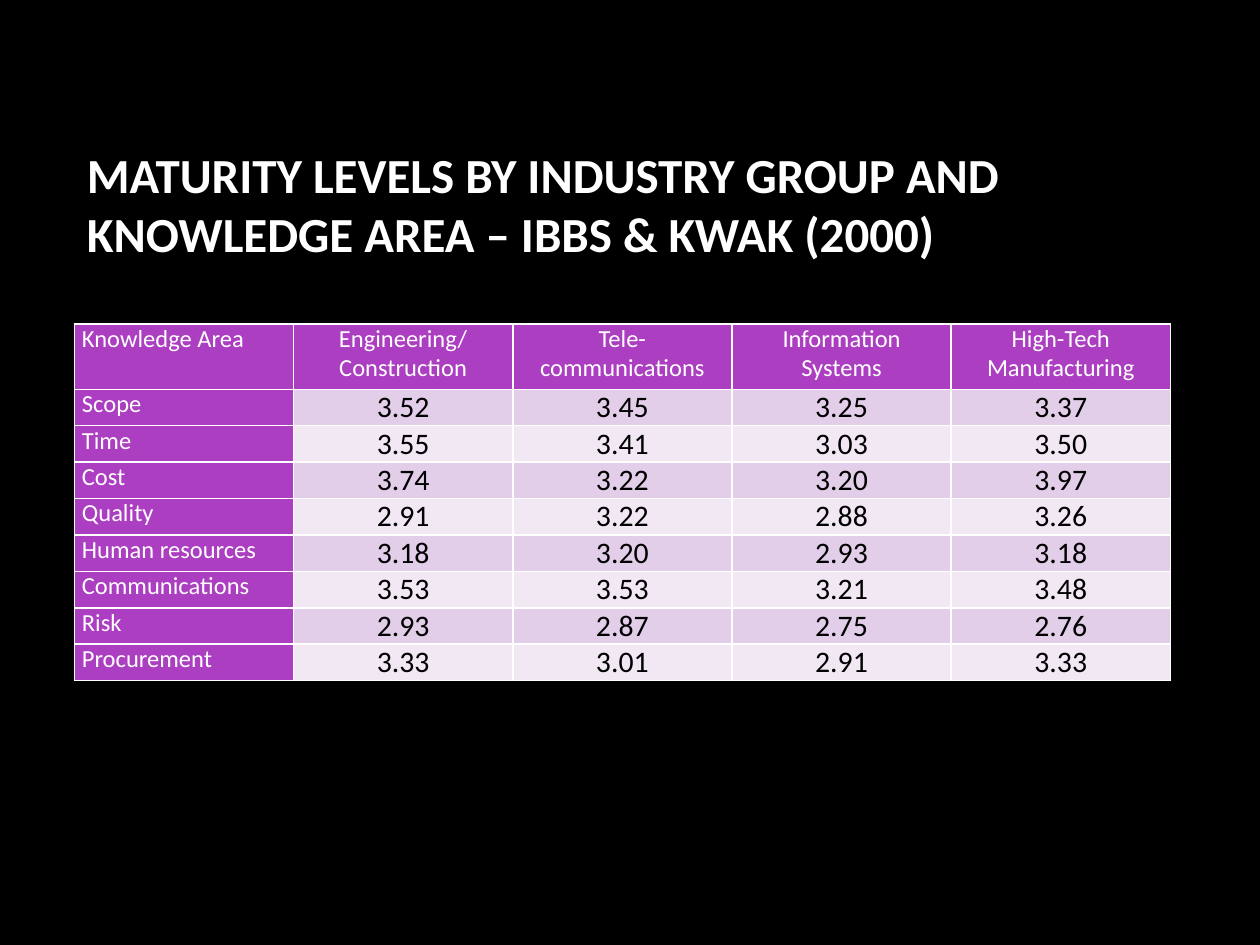
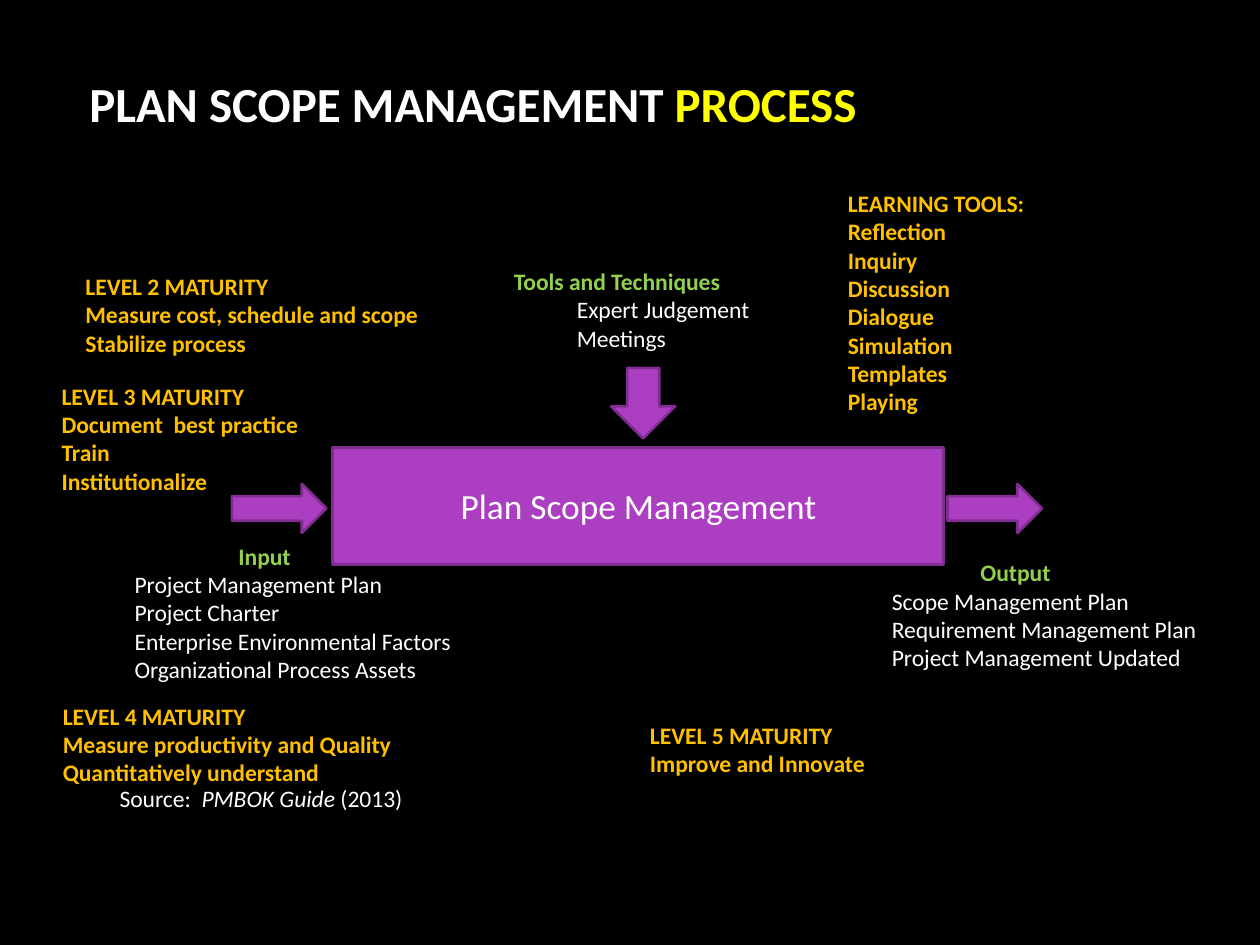
from dataclasses import dataclass

from lxml.etree import SubElement
from pptx import Presentation
from pptx.dml.color import RGBColor
from pptx.enum.shapes import MSO_SHAPE
from pptx.enum.text import MSO_ANCHOR, PP_ALIGN
from pptx.oxml.ns import qn
from pptx.shapes.autoshape import Shape
from pptx.slide import Slide
from pptx.table import _Cell
from pptx.text.text import TextFrame
from pptx.util import Emu, Inches, Pt

FONT = "Calibri"
BLACK = RGBColor(0x00, 0x00, 0x00)
WHITE = RGBColor(0xFF, 0xFF, 0xFF)
YELLOW = RGBColor(0xFF, 0xFF, 0x00)
AMBER = RGBColor(0xFF, 0xC0, 0x00)
GREEN = RGBColor(0x92, 0xD0, 0x50)
PURPLE = RGBColor(0xAC, 0x3E, 0xC1)
DARK_PURPLE = RGBColor(0x7F, 0x2E, 0x8F)
ROW_BANDS = (RGBColor(0xE3, 0xCE, 0xE9), RGBColor(0xF1, 0xE8, 0xF4))

SLIDE_WIDTH, SLIDE_HEIGHT = Inches(10), Inches(7.5)
GRID_COLUMNS, GRID_ROWS = 100, 75
NOTE_SIZE = 13.5
ITEM_INDENT = 5
CELL_MARGIN = 0.6


@dataclass(frozen=True)
class Area:
    """A rectangle in grid columns and rows."""
    column: float
    row: float
    columns: float
    rows: float

    def box(self) -> tuple[Emu, Emu, Emu, Emu]:
        return (across(self.column), down(self.row),
                across(self.columns), down(self.rows))


@dataclass(frozen=True)
class Run:
    text: str
    color: RGBColor = WHITE
    size: float = NOTE_SIZE
    bold: bool = False
    italic: bool = False


@dataclass(frozen=True)
class Line:
    runs: tuple[Run, ...]
    alignment: PP_ALIGN = PP_ALIGN.LEFT
    indent: float = 0


@dataclass(frozen=True)
class Note:
    area: Area
    lines: tuple[Line, ...]


@dataclass(frozen=True)
class Arrow:
    area: Area
    rotation: float = 0


def across(columns: float) -> Emu:
    return Emu(round(SLIDE_WIDTH * columns / GRID_COLUMNS))


def down(rows: float) -> Emu:
    return Emu(round(SLIDE_HEIGHT * rows / GRID_ROWS))


def maturity_note(area: Area, *texts: str) -> Note:
    return Note(area, tuple(Line((Run(text, AMBER, bold=True),)) for text in texts))


def process_note(area: Area, alignment: PP_ALIGN, heading: str, *items: str) -> Note:
    """A green heading over indented white items."""
    heading_line = Line((Run(heading, GREEN, bold=True),), alignment)
    return Note(area, (heading_line,
                       *(Line((Run(item),), indent=ITEM_INDENT) for item in items)))


INDUSTRY_HEADERS = (
    ("Knowledge Area",),
    ("Engineering/", "Construction"),
    ("Tele-", "communications"),
    ("Information", "Systems"),
    ("High-Tech", "Manufacturing"),
)
MATURITY_LEVELS = {
    "Scope": (3.52, 3.45, 3.25, 3.37),
    "Time": (3.55, 3.41, 3.03, 3.50),
    "Cost": (3.74, 3.22, 3.20, 3.97),
    "Quality": (2.91, 3.22, 2.88, 3.26),
    "Human resources": (3.18, 3.20, 2.93, 3.18),
    "Communications": (3.53, 3.53, 3.21, 3.48),
    "Risk": (2.93, 2.87, 2.75, 2.76),
    "Procurement": (3.33, 3.01, 2.91, 3.33),
}
TABLE_AREA = Area(5.9, 25.7, 87, 28.3)
HEADER_ROWS, LEVEL_ROWS = 5.2, 2.89

PROCESS_AREA = Area(26.4, 35.5, 48.5, 9.3)
ARROWS = (
    Arrow(Area(48.5, 29.2, 5.1, 5.6)),
    Arrow(Area(20.2, 36.6, 3.9, 7.5), 270),
    Arrow(Area(77, 36.6, 3.9, 7.5), 270),
)
NOTES = (
    process_note(Area(39.8, 20.7, 21, 7.8), PP_ALIGN.LEFT, "Tools and Techniques",
                 "Expert Judgement", "Meetings"),
    process_note(Area(4.7, 42.5, 32.6, 12.4), PP_ALIGN.CENTER, "Input",
                 "Project Management Plan", "Project Charter",
                 "Enterprise Environmental Factors", "Organizational Process Assets"),
    process_note(Area(64.8, 43.8, 31.6, 10.1), PP_ALIGN.CENTER, "Output",
                 "Scope Management Plan", "Requirement Management Plan",
                 "Project Management Updated"),
    Note(Area(8.5, 61.7, 24.9, 3.3),
         (Line((Run("Source:  "), Run("PMBOK Guide", italic=True), Run(" (2013)"))),)),
    maturity_note(Area(66.3, 14.5, 21.8, 21.5), "LEARNING TOOLS:", "Reflection",
                  "Inquiry", "Discussion", "Dialogue", "Simulation", "Templates",
                  "Playing"),
    maturity_note(Area(5.8, 21.1, 38.1, 7.8), "LEVEL 2 MATURITY",
                  "Measure cost, schedule and scope", "Stabilize process"),
    maturity_note(Area(3.9, 29.8, 24.5, 10.1), "LEVEL 3 MATURITY",
                  "Document  best practice", "Train", "Institutionalize"),
    maturity_note(Area(4, 55.2, 43.7, 10.1), "LEVEL 4 MATURITY",
                  "Measure productivity and Quality", "Quantitatively understand"),
    maturity_note(Area(50.6, 56.7, 35.2, 5.6), "LEVEL 5 MATURITY",
                  "Improve and Innovate"),
)


def write_lines(frame: TextFrame, lines: tuple[Line, ...]) -> None:
    frame.word_wrap = True
    for index, line in enumerate(lines):
        paragraph = frame.add_paragraph() if index else frame.paragraphs[0]
        paragraph.alignment = line.alignment
        if line.indent:
            paragraph._p.get_or_add_pPr().set("marL", str(across(line.indent)))
        for part in line.runs:
            run = paragraph.add_run()
            run.text = part.text
            run.font.name = FONT
            run.font.size = Pt(part.size)
            run.font.bold = part.bold
            run.font.italic = part.italic
            run.font.color.rgb = part.color


def add_titled_slide(presentation: Presentation, area: Area,
                     *parts: tuple[str, RGBColor]) -> Slide:
    slide = presentation.slides.add_slide(
        presentation.slide_layouts.get_by_name("Title Only"))
    title = slide.shapes.title
    title.left, title.top, title.width, title.height = area.box()
    title.text_frame.vertical_anchor = MSO_ANCHOR.MIDDLE
    runs = tuple(Run(text, color, 28, bold=True) for text, color in parts)
    write_lines(title.text_frame, (Line(runs),))
    return slide


def add_purple_shape(slide: Slide, kind: MSO_SHAPE, area: Area) -> Shape:
    shape = slide.shapes.add_shape(kind, *area.box())
    shape.shadow.inherit = False
    shape.fill.solid()
    shape.fill.fore_color.rgb = PURPLE
    shape.line.color.rgb = DARK_PURPLE
    shape.line.width = Pt(1.5)
    return shape


def add_cell_borders(cell: _Cell) -> None:
    properties = cell._tc.get_or_add_tcPr()
    for position, tag in enumerate(("a:lnL", "a:lnR", "a:lnT", "a:lnB")):
        border = SubElement(properties, qn(tag), w=str(Pt(1)))
        fill = SubElement(border, qn("a:solidFill"))
        SubElement(fill, qn("a:srgbClr"), val=str(WHITE))
        properties.insert(position, border)


def fill_cell(cell: _Cell, texts: tuple[str, ...], fill: RGBColor,
              color: RGBColor, size: float, alignment: PP_ALIGN) -> None:
    cell.margin_left = cell.margin_right = across(CELL_MARGIN)
    cell.margin_top = cell.margin_bottom = 0
    cell.fill.solid()
    cell.fill.fore_color.rgb = fill
    add_cell_borders(cell)
    write_lines(cell.text_frame, tuple(
        Line((Run(text, color, size),), alignment) for text in texts))


def add_maturity_table(slide: Slide) -> None:
    table = slide.shapes.add_table(
        len(MATURITY_LEVELS) + 1, len(INDUSTRY_HEADERS), *TABLE_AREA.box()).table
    table.first_row = table.horz_banding = False
    for column in table.columns:
        column.width = across(TABLE_AREA.columns / len(INDUSTRY_HEADERS))
    for index, row in enumerate(table.rows):
        row.height = down(LEVEL_ROWS if index else HEADER_ROWS)

    for column, texts in enumerate(INDUSTRY_HEADERS):
        alignment = PP_ALIGN.CENTER if column else PP_ALIGN.LEFT
        fill_cell(table.cell(0, column), texts, PURPLE, WHITE, 14, alignment)
    for row, (knowledge_area, levels) in enumerate(MATURITY_LEVELS.items(), 1):
        fill_cell(table.cell(row, 0), (knowledge_area,), PURPLE, WHITE, 14,
                  PP_ALIGN.LEFT)
        band = ROW_BANDS[(row - 1) % len(ROW_BANDS)]
        for column, level in enumerate(levels, 1):
            fill_cell(table.cell(row, column), (f"{level:.2f}",), band, BLACK, 17,
                      PP_ALIGN.CENTER)


def add_process_diagram(slide: Slide) -> None:
    process = add_purple_shape(slide, MSO_SHAPE.RECTANGLE, PROCESS_AREA)
    process.text_frame.vertical_anchor = MSO_ANCHOR.MIDDLE
    write_lines(process.text_frame, (
        Line((Run("Plan Scope Management", size=20.2),), PP_ALIGN.CENTER),))
    for arrow in ARROWS:
        shape = add_purple_shape(slide, MSO_SHAPE.DOWN_ARROW, arrow.area)
        shape.rotation = arrow.rotation
    for note in NOTES:
        text_box = slide.shapes.add_textbox(*note.area.box())
        write_lines(text_box.text_frame, note.lines)


def main() -> None:
    presentation = Presentation()
    presentation.slide_width, presentation.slide_height = SLIDE_WIDTH, SLIDE_HEIGHT
    background = presentation.slide_master.background.fill
    background.solid()
    background.fore_color.rgb = BLACK

    maturity_slide = add_titled_slide(
        presentation, Area(5.9, 10.2, 81.7, 11.9),
        ("MATURITY LEVELS BY INDUSTRY GROUP AND KNOWLEDGE AREA – IBBS & KWAK (2000)",
         WHITE))
    add_maturity_table(maturity_slide)

    process_slide = add_titled_slide(
        presentation, Area(6.1, 2.2, 83.1, 11.9),
        ("PLAN SCOPE MANAGEMENT ", WHITE), ("PROCESS", YELLOW))
    add_process_diagram(process_slide)

    presentation.save("out.pptx")


if __name__ == "__main__":
    main()
